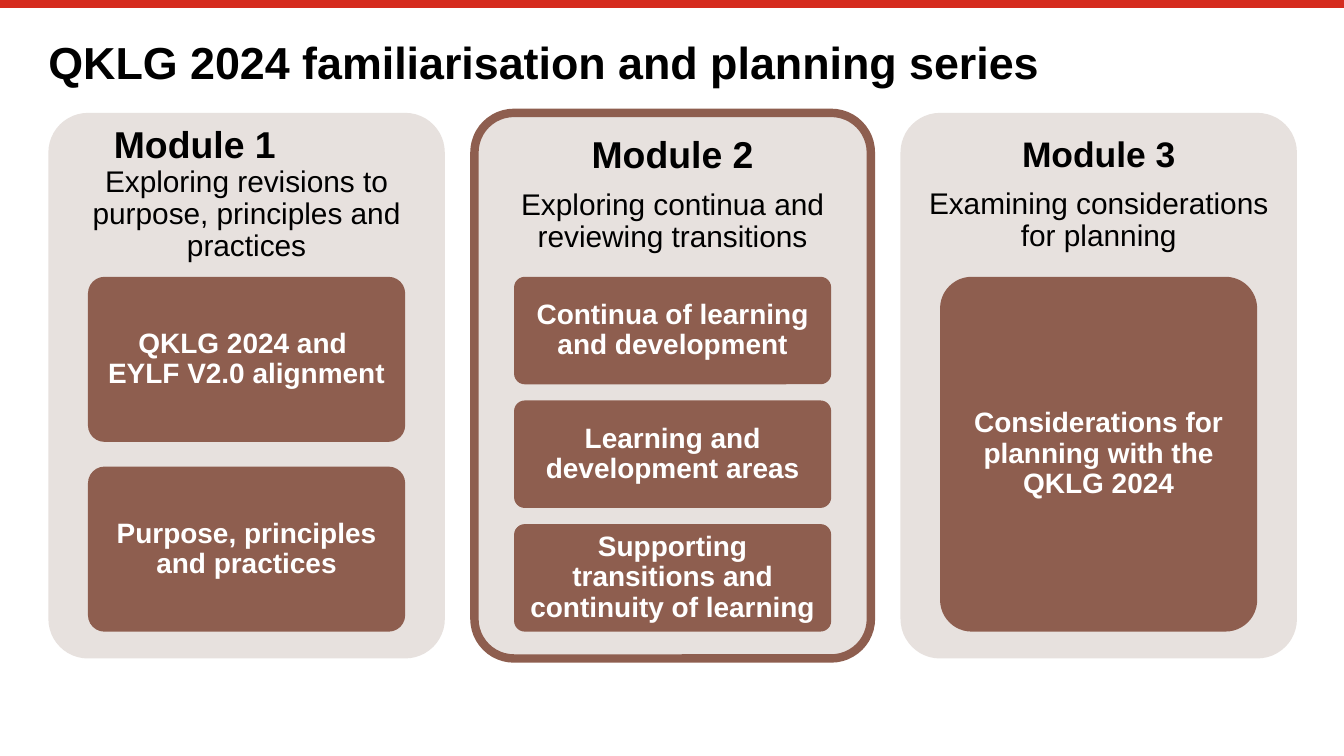
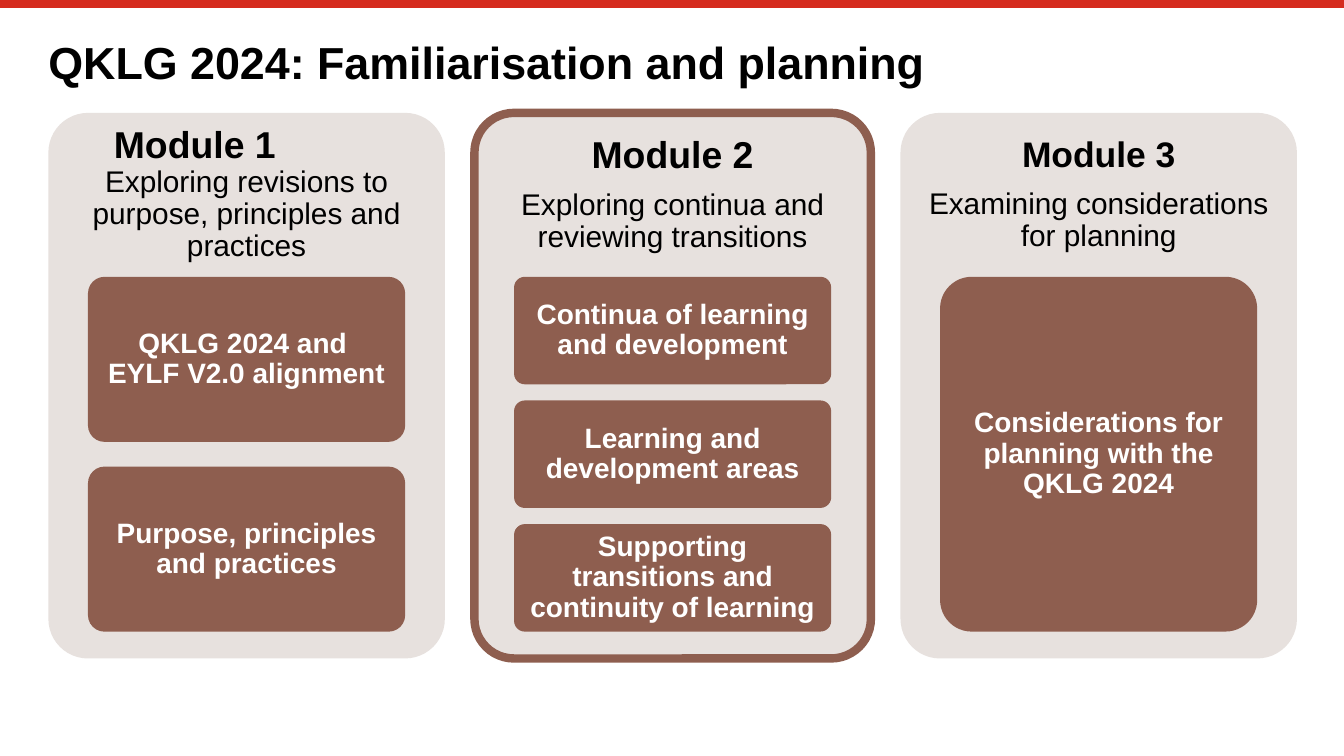
from pptx import Presentation
from pptx import util as u
from pptx.dml.color import RGBColor
from pptx.enum import shapes, text
from pptx.oxml.ns import qn
from lxml import etree

INK = {"red": "D52B1E", "black": "000000", "white": "FFFFFF",
       "card": "E7E1DE", "brown": "8E5E4F"}
FONT = "Arial"
LEFT, TOP = 0.36, 0.84            # first card
CARD_W, CARD_H, STEP = 2.95, 4.06, 3.17
HEAD_H = 1.22                     # heading area of a card
TILE_W, TILE_H, GAP = 2.36, 2.64, 0.15   # GAP: share of a tile's height

TITLES = ["QKLG 2024 familiarisation and planning series",
          "QKLG 2024: Familiarisation and planning"]

# name, its format, summary, tiles, outlined card
MODULES = [
    ("Module 1", dict(size=20, after=0, right=0.77),
     "Exploring revisions to purpose, principles and practices",
     ["QKLG 2024 and \vEYLF V2.0 alignment",
      "Purpose, principles and practices"], False),
    ("Module 2", dict(size=20, after=7),
     "Exploring continua and reviewing transitions",
     ["Continua of learning and development",
      "Learning and development areas",
      "Supporting transitions and continuity of learning"], True),
    ("Module 3", dict(size=19, after=7),
     "Examining considerations for planning",
     ["Considerations for planning with the QKLG 2024"], False),
]


def color(name):
    return RGBColor.from_string(INK[name])


def place(*box):
    return [u.Inches(n) for n in box]


def write(par, words, size=16, bold=False, ink="black", center=True,
          after=0, right=0):
    """Fill one paragraph; right is its right indent in inches."""
    par.text = words
    par.line_spacing = 0.9
    par.space_after = u.Pt(after)
    par.alignment = text.PP_ALIGN.CENTER if center else text.PP_ALIGN.LEFT
    par._p.get_or_add_pPr().set("marR", str(u.Inches(right)))
    for run in par.runs:
        font = run.font
        font.name, font.size, font.bold = FONT, u.Pt(size), bold
        font.color.rgb = color(ink)


def frame(shape, side, edge, anchor=text.MSO_ANCHOR.MIDDLE):
    body = shape.text_frame
    body.word_wrap = True
    body.vertical_anchor = anchor
    body.margin_left = body.margin_right = u.Inches(side)
    body.margin_top = body.margin_bottom = u.Inches(edge)
    return body


def panel(slide, box, fill, line=None):
    shape = slide.shapes.add_shape(
        shapes.MSO_SHAPE.ROUNDED_RECTANGLE, *place(*box))
    shape.adjustments[0] = 0.1
    shape.shadow.inherit = False
    shape.fill.solid()
    shape.fill.fore_color.rgb = color(fill)
    if line:
        shape.line.color.rgb = color(line)
        shape.line.width = u.Pt(4.5)
    else:
        shape.line.fill.background()
    return shape


def header(slide, title):
    # Top band
    band = slide.shapes.add_connector(
        shapes.MSO_CONNECTOR.STRAIGHT, *place(0, 0.03, 10, 0.03))
    band.line.color.rgb = color("red")
    band.line.width = u.Pt(4.2)
    etree.SubElement(band._element.spPr, qn("a:effectLst"))
    # Title
    box = slide.shapes.add_textbox(*place(LEFT, 0.3, 9.29, 0.39))
    body = frame(box, 0, 0, text.MSO_ANCHOR.TOP)
    write(body.paragraphs[0], title, size=24, bold=True, center=False)


def module(slide, left, name, style, about, tiles, active):
    panel(slide, (left, TOP, CARD_W, CARD_H), "card",
          "brown" if active else None)
    # Heading
    box = slide.shapes.add_textbox(*place(left, TOP, CARD_W, HEAD_H))
    body = frame(box, 0.08, 0.08)
    write(body.paragraphs[0], name, bold=True, **style)
    write(body.add_paragraph(), about)
    # Tiles share the space below the heading
    count = len(tiles)
    high = TILE_H / (count + GAP * (count - 1))
    inset = (CARD_W - TILE_W) / 2
    for row, words in enumerate(tiles):
        top = TOP + HEAD_H + row * high * (1 + GAP)
        tile = panel(slide, (left + inset, top, TILE_W, high), "brown")
        write(frame(tile, 0.04, 0.03).paragraphs[0], words,
              size=15, bold=True, ink="white")


def main():
    deck = Presentation()
    # Widescreen, 16:9
    deck.slide_width = u.Inches(10)
    deck.slide_height = deck.slide_width * 9 // 16
    for title in TITLES:
        slide = deck.slides.add_slide(deck.slide_layouts[6])
        header(slide, title)
        for col, parts in enumerate(MODULES):
            module(slide, LEFT + col * STEP, *parts)
    deck.save("out.pptx")


if __name__ == "__main__":
    main()
